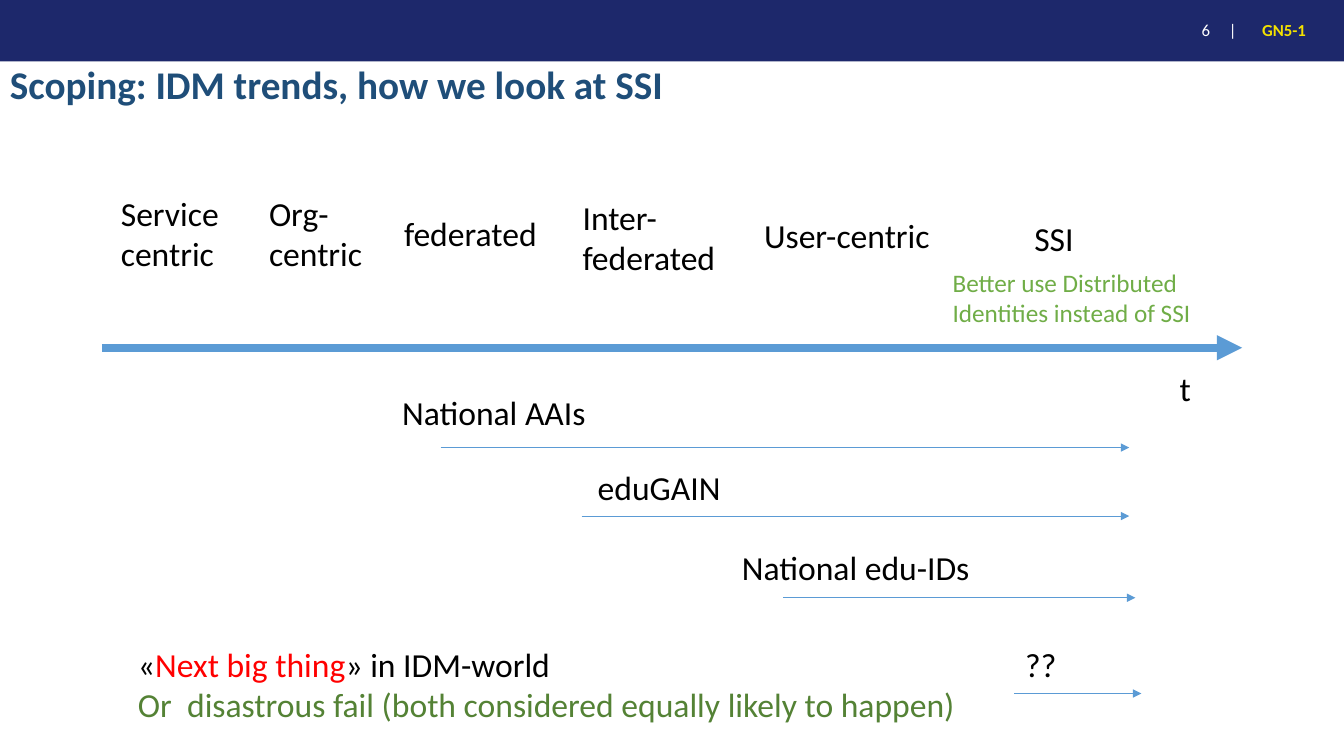
from lxml.etree import SubElement
from pptx import Presentation
from pptx.dml.color import RGBColor
from pptx.enum.shapes import MSO_CONNECTOR, MSO_SHAPE
from pptx.enum.text import MSO_ANCHOR
from pptx.oxml.ns import qn
from pptx.util import Inches, Pt

NAVY = RGBColor(0x1D, 0x28, 0x6B)
TITLE_BLUE = RGBColor(0x1F, 0x4E, 0x79)
ARROW_BLUE = RGBColor(0x5B, 0x9B, 0xD5)
YELLOW = RGBColor(0xF4, 0xE2, 0x00)
WHITE = RGBColor(0xFF, 0xFF, 0xFF)
BLACK = RGBColor(0x00, 0x00, 0x00)
RED = RGBColor(0xFF, 0x00, 0x00)
LIGHT_GREEN = RGBColor(0x70, 0xAD, 0x47)
DARK_GREEN = RGBColor(0x54, 0x82, 0x35)


def style(paragraph, size, color, bold=False):
    paragraph.font.name = "Calibri"
    paragraph.font.size = Pt(size)
    paragraph.font.bold = bold
    paragraph.font.color.rgb = color


def add_text(shapes, box, lines, size=24, color=BLACK, bold=False,
             wrap=False, anchor=MSO_ANCHOR.TOP):
    frame = shapes.add_textbox(*map(Inches, box)).text_frame
    frame.word_wrap = wrap
    frame.vertical_anchor = anchor
    for index, line in enumerate(lines):
        paragraph = frame.add_paragraph() if index else frame.paragraphs[0]
        paragraph.text = line
        style(paragraph, size, color, bold)
    return frame


def add_arrow(shapes, start, end, y, weight=0.5):
    arrow = shapes.add_connector(
        MSO_CONNECTOR.STRAIGHT, Inches(start), Inches(y), Inches(end), Inches(y))
    arrow.line.color.rgb = ARROW_BLUE
    arrow.line.width = Pt(weight)
    SubElement(arrow.line._get_or_add_ln(), qn("a:tailEnd"), type="triangle")
    SubElement(arrow._element.spPr, qn("a:effectLst"))


def add_header(slide, left, top, width, height):
    band = slide.shapes.add_shape(
        MSO_SHAPE.RECTANGLE, *map(Inches, (left, top, width, height)))
    band.shadow.inherit = False
    band.fill.solid()
    band.fill.fore_color.rgb = NAVY
    band.line.fill.background()

    number = add_text(slide.shapes, (left + 11.82, top + 0.16, 0.6, 0.36), [],
                      anchor=MSO_ANCHOR.MIDDLE).paragraphs[0]
    number.text = "6\t|"
    tabs = SubElement(number._p.get_or_add_pPr(), qn("a:tabLst"))
    SubElement(tabs, qn("a:tab"), pos=str(Inches(0.27)), algn="l")
    style(number, 12, WHITE)

    project = add_text(slide.shapes, (left + 12.42, top + 0.19, 0.9, 0.32),
                       ["GN5-1"], 12, YELLOW, True, anchor=MSO_ANCHOR.MIDDLE)
    project.paragraphs[0].line_spacing = 0.9


def add_title(slide, left, top, width, height):
    title = add_text(slide.shapes, (left, top, width, height),
                     ["Scoping: IDM trends, how we look at SSI"], 28,
                     TITLE_BLUE, True, True, MSO_ANCHOR.MIDDLE)
    title.paragraphs[0].line_spacing = 0.9


def add_timeline(slide, left, top, width, height):
    axis = top + height
    add_arrow(slide.shapes, left, left + width, axis, 6)
    add_text(slide.shapes, (left + 10.59, axis + 0.15, 0.31, 0.5), ["t"])
    stages = [
        (0.09, 0, 1.19, ["Service", "centric"]),
        (1.56, 0, 1.13, ["Org-", "centric"]),
        (2.9, 0.2, 1.53, ["federated"]),
        (4.67, 0.04, 1.53, ["Inter-", "federated"]),
        (6.47, 0.22, 1.86, ["User-centric"]),
        (9.15, 0.25, 0.59, ["SSI"]),
    ]
    for x, y, stage_width, lines in stages:
        stage_height = 0.09 + 0.41 * len(lines)
        add_text(slide.shapes,
                 (left + x, top + y, stage_width, stage_height), lines)
    add_text(slide.shapes, (left + 8.34, top + 0.74, 3.36, 0.71),
             ["Better use Distributed Identities instead of SSI"], 18,
             LIGHT_GREEN, wrap=True)


def add_span(slide, left, top, width, height, label, label_width, start, end):
    span = slide.shapes.add_group_shape().shapes
    add_arrow(span, left + start, left + end, top + height)
    add_text(span, (left, top, label_width, 0.5), [label])


def add_outlook(slide, left, top, width, height):
    frame = add_text(slide.shapes, (left, top, width, height), [], wrap=True)
    hope = frame.paragraphs[0]
    for words, color in (("«", BLACK), ("Next big thing", RED),
                         ("» in IDM-world", BLACK)):
        run = hope.add_run()
        run.text = words
        run.font.color.rgb = color
    style(hope, 24, BLACK)
    fail = frame.add_paragraph()
    fail.text = "Or  disastrous fail (both considered equally likely to happen)"
    style(fail, 24, DARK_GREEN)


def main():
    deck = Presentation()
    deck.slide_width = Inches(13.33)
    deck.slide_height = Inches(7.5)
    slide = deck.slides.add_slide(deck.slide_layouts[6])

    add_header(slide, 0, -0.04, 13.33, 0.65)
    add_title(slide, 0, 0.47, 12.29, 0.78)
    add_timeline(slide, 1.01, 1.86, 11.31, 1.59)
    add_span(slide, 3.89, 3.84, 7.31, 0.6, "National AAIs", 2.04, 0.48, 7.31)
    add_span(slide, 5.83, 4.58, 5.37, 0.54, "eduGAIN", 1.43, -0.06, 5.37)
    add_span(slide, 7.26, 5.38, 4, 0.55, "National edu-IDs", 2.48, 0.51, 4)
    add_span(slide, 10.07, 6.34, 1.25, 0.54, "??", 0.51, -0.01, 1.25)
    add_outlook(slide, 1.27, 6.34, 10.42, 0.91)

    deck.save("out.pptx")


if __name__ == "__main__":
    main()
